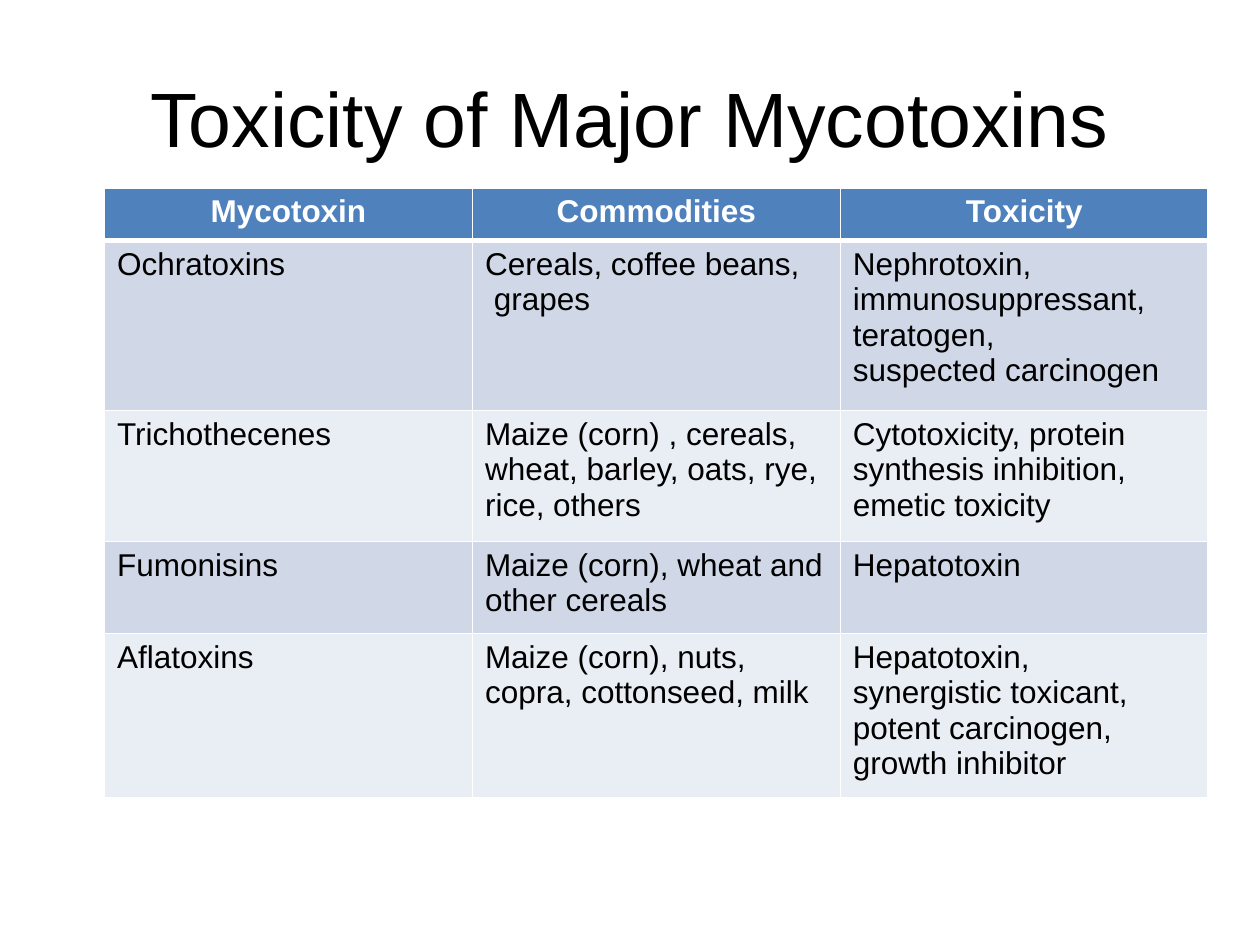
from lxml import etree
from pptx import Presentation
from pptx.dml.color import RGBColor
from pptx.enum import text
from pptx.oxml import ns
from pptx.util import Inches, Pt

FONT = "Arial"
BLACK = RGBColor(0x00, 0x00, 0x00)
WHITE = RGBColor(0xFF, 0xFF, 0xFF)
HEADER_BLUE = RGBColor(0x4F, 0x81, 0xBD)
BAND_FILLS = (RGBColor(0xE9, 0xED, 0xF4), RGBColor(0xD0, 0xD8, 0xE8))

COLUMN_WIDTH = 2.92
ROW_HEIGHTS = (0.42, 1.35, 1.04, 0.73, 1.3)
# \v is a line break inside a paragraph, \n starts a new paragraph
ROWS = (
    ("Mycotoxin", "Commodities", "Toxicity"),
    ("Ochratoxins", "Cereals, coffee beans,\v grapes",
     "Nephrotoxin, \vimmunosuppressant, \vteratogen, \vsuspected carcinogen"),
    ("Trichothecenes",
     "Maize (corn) , cereals, wheat, barley, oats, rye, rice, others",
     "Cytotoxicity, protein \vsynthesis inhibition, \vemetic toxicity"),
    ("Fumonisins", "Maize (corn), wheat and other cereals", "Hepatotoxin"),
    ("Aflatoxins", "Maize (corn), nuts, \vcopra, cottonseed, milk",
     "Hepatotoxin,\nsynergistic toxicant,\vpotent carcinogen, \vgrowth inhibitor"),
)


def write_text(frame, content, size, color, bold=False, align=text.PP_ALIGN.LEFT):
    frame.text = content
    for para in frame.paragraphs:
        para.alignment = align
        for span in para.runs:
            span.font.name = FONT
            span.font.size = Pt(size)
            span.font.bold = bold
            span.font.color.rgb = color


def add_title(page, content):
    box = page.shapes.add_textbox(Inches(0.5), Inches(0.3), Inches(9), Inches(1.25))
    box.text_frame.word_wrap = True
    box.text_frame.vertical_anchor = text.MSO_ANCHOR.MIDDLE
    write_text(box.text_frame, content, 44, BLACK, align=text.PP_ALIGN.CENTER)


def set_borders(cell, top, bottom):
    """Draw white cell borders; call before the fill, which must follow them."""
    properties = cell._tc.get_or_add_tcPr()
    for side, width in (("L", 1), ("R", 1), ("T", top), ("B", bottom)):
        line = etree.SubElement(properties, ns.qn(f"a:ln{side}"), w=str(Pt(width)))
        fill = etree.SubElement(line, ns.qn("a:solidFill"))
        etree.SubElement(fill, ns.qn("a:srgbClr"), val=str(WHITE))


def add_toxin_table(page):
    columns = len(ROWS[0])
    table = page.shapes.add_table(
        len(ROWS), columns, Inches(0.83), Inches(1.49),
        Inches(COLUMN_WIDTH * columns), Inches(sum(ROW_HEIGHTS))).table
    for column in table.columns:
        column.width = Inches(COLUMN_WIDTH)
    for index, (height, entries) in enumerate(zip(ROW_HEIGHTS, ROWS)):
        table.rows[index].height = Inches(height)
        header = index == 0
        for cell, entry in zip(table.rows[index].cells, entries):
            set_borders(cell, 3 if index == 1 else 1, 3 if header else 1)
            cell.fill.solid()
            cell.fill.fore_color.rgb = HEADER_BLUE if header else BAND_FILLS[index % 2]
            write_text(cell.text_frame, entry, 18, WHITE if header else BLACK, header,
                       text.PP_ALIGN.CENTER if header else text.PP_ALIGN.LEFT)


def main():
    deck = Presentation()
    deck.slide_width, deck.slide_height = Inches(10), Inches(7.5)
    page = deck.slides.add_slide(deck.slide_layouts[6])
    add_title(page, "Toxicity of Major Mycotoxins")
    add_toxin_table(page)
    deck.save("out.pptx")


if __name__ == "__main__":
    main()
